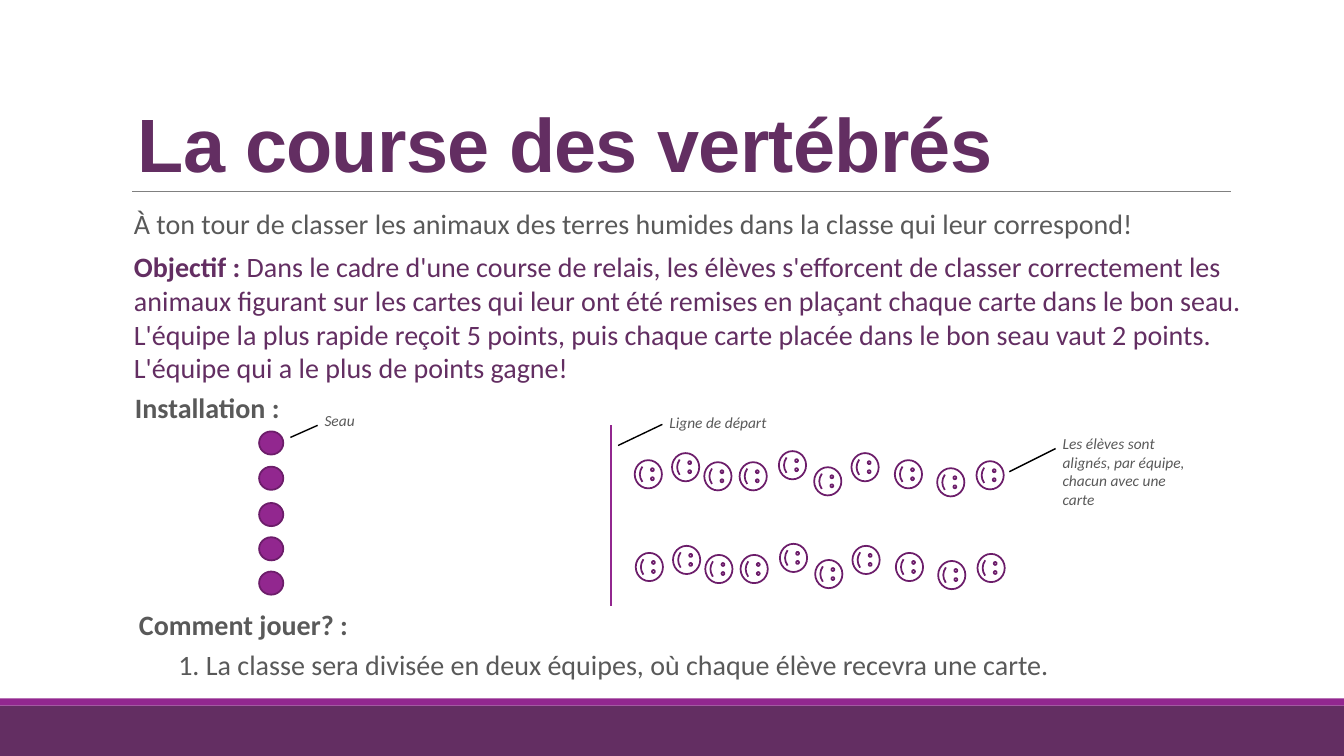
from pptx import Presentation
from pptx.dml.color import RGBColor
from pptx.enum.shapes import MSO_CONNECTOR, MSO_SHAPE
from pptx.enum.text import MSO_ANCHOR
from pptx.oxml.ns import qn
from pptx.util import Inches, Pt
from lxml import etree

RECT, OVAL, SMILEY = MSO_SHAPE.RECTANGLE, MSO_SHAPE.OVAL, MSO_SHAPE.SMILEY_FACE
STRAIGHT = MSO_CONNECTOR.STRAIGHT
TOP, BOTTOM = MSO_ANCHOR.TOP, MSO_ANCHOR.BOTTOM

PLUM = RGBColor(0x63, 0x2E, 0x62)
PURPLE = RGBColor(0x92, 0x27, 0x8F)
EDGE = RGBColor(0x6C, 0x1D, 0x6A)
GREY = RGBColor(0x59, 0x59, 0x59)
RULE = RGBColor(0x80, 0x80, 0x80)
BLACK = RGBColor(0, 0, 0)

BODY = {"name": "Calibri", "size": Pt(20), "bold": False}
HEAD = {**BODY, "bold": True}
NOTE = {**BODY, "size": Pt(11), "italic": True}
TITLE = {"name": "Arial", "size": Pt(54), "bold": True}

GOAL = (
    "Dans le cadre d'une course de relais, les élèves s'efforcent de classer "
    "correctement les animaux figurant sur les cartes qui leur ont été remises "
    "en plaçant chaque carte dans le bon seau. L'équipe la plus rapide reçoit "
    "5 points, puis chaque carte placée dans le bon seau vaut 2 points. "
    "L'équipe qui a le plus de points gagne!"
)

TEXTS = [
    (1.23, 2, 11, 0.44, BODY,
     "À ton tour de classer les animaux des terres humides dans la classe qui leur correspond!"),
    (1.24, 3.83, 3.7, 0.44, HEAD, "Installation :"),
    (1.28, 5.98, 3.7, 0.44, HEAD, "Comment jouer? :"),
    (1.67, 6.37, 10.62, 0.44, BODY,
     "1. La classe sera divisée en deux équipes, où chaque élève recevra une carte."),
    (3.12, 4.03, 0.98, 0.29, NOTE, "Seau"),
    (6.54, 4.05, 1.55, 0.29, NOTE, "Ligne de départ"),
    (10.44, 4.26, 1.55, 0.84, NOTE,
     "Les élèves sont alignés, par équipe, chacun avec une carte"),
]

LINES = [
    (1.31, 1.9, 12.21, 1.9, RULE, 0.5),
    (6.06, 4.22, 6.06, 6.01, PURPLE, 1),
    (2.88, 4.34, 3.15, 4.22, BLACK, 1),
    (6.13, 4.42, 6.57, 4.21, BLACK, 1),
    (10.01, 4.68, 10.47, 4.45, BLACK, 1),
]

BUCKETS = [4.28, 4.63, 4.99, 5.33, 5.67]
PUPILS = [
    (6.29, 4.57), (6.66, 4.5), (6.98, 4.59), (7.33, 4.59), (7.72, 4.48),
    (8.07, 4.64), (8.44, 4.5), (8.87, 4.57), (9.29, 4.65), (9.68, 4.58),
]
TEAMS = [(0, 0), (0.01, 0.92)]


class Board:
    def __init__(self, slide):
        self.shapes = slide.shapes

    def shape(self, kind, x, y, w, h, fill=None, edge=None, turn=0):
        item = self.shapes.add_shape(kind, Inches(x), Inches(y), Inches(w), Inches(h))
        item.shadow.inherit = False
        item.rotation = turn
        if fill is None:
            item.fill.background()
        else:
            item.fill.solid()
            item.fill.fore_color.rgb = fill
        if edge is None:
            item.line.fill.background()
        else:
            item.line.color.rgb = edge
            item.line.width = Pt(1.25)

    def line(self, x1, y1, x2, y2, color, width):
        item = self.shapes.add_connector(
            STRAIGHT, Inches(x1), Inches(y1), Inches(x2), Inches(y2))
        item.line.color.rgb = color
        item.line.width = Pt(width)
        etree.SubElement(item._element.spPr, qn("a:effectLst"))

    def text(self, x, y, w, h, runs, color=GREY, anchor=TOP):
        """Add a wrapped one-paragraph box from (words, style) pairs."""
        box = self.shapes.add_textbox(Inches(x), Inches(y), Inches(w), Inches(h))
        frame = box.text_frame
        frame.word_wrap = True
        frame.vertical_anchor = anchor
        para = frame.paragraphs[0]
        for words, style in runs:
            run = para.add_run()
            run.text = words
            run.font.color.rgb = color
            for key, value in style.items():
                setattr(run.font, key, value)
        return para


def main():
    prs = Presentation()
    prs.slide_width, prs.slide_height = Inches(13.33), Inches(7.5)
    board = Board(prs.slides.add_slide(prs.slide_layouts[6]))

    board.shape(RECT, 0, 7, 13.33, 0.5, PLUM)
    board.shape(RECT, 0, 6.93, 13.33, 0.07, PURPLE)

    title = board.text(1.27, 0.32, 11, 1.59,
                       [("La course des vertébrés", TITLE)], PLUM, BOTTOM)
    title.line_spacing = 0.85
    title.runs[0]._r.get_or_add_rPr().set("spc", "-50")

    board.text(1.23, 2.43, 11.28, 1.45,
               [("Objectif : ", HEAD), (GOAL, BODY)], PLUM)
    for x, y, w, h, style, words in TEXTS:
        board.text(x, y, w, h, [(words, style)])

    for line in LINES:
        board.line(*line)
    for y in BUCKETS:
        board.shape(OVAL, 2.57, y, 0.24, 0.23, PURPLE, EDGE)
    for dx, dy in TEAMS:
        for x, y in PUPILS:
            board.shape(SMILEY, x + dx, y + dy, 0.28, 0.27, edge=EDGE, turn=90)

    prs.save("out.pptx")


if __name__ == "__main__":
    main()
